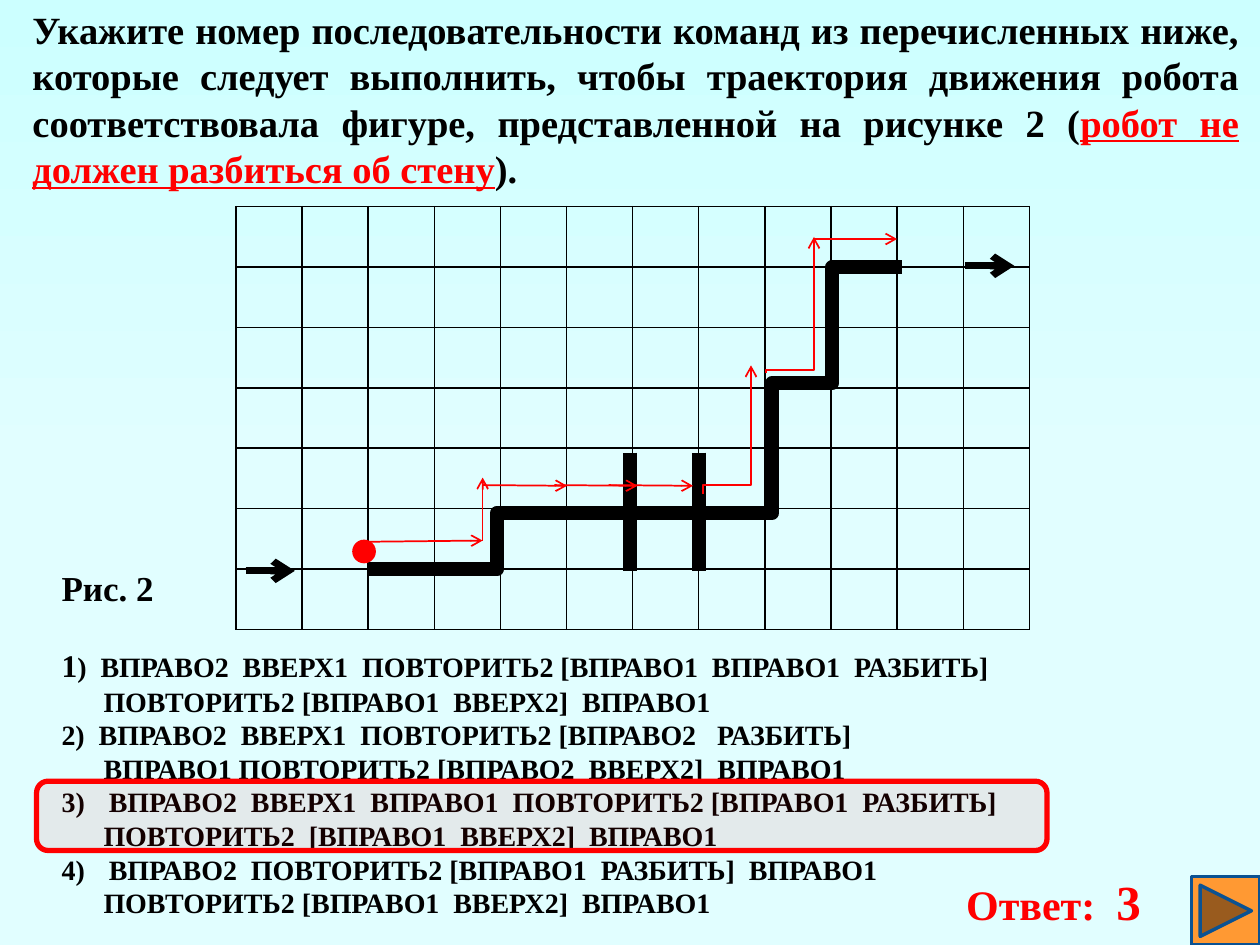
from lxml import etree
from pptx import Presentation
from pptx import util as u
from pptx.dml.color import RGBColor
from pptx.enum import shapes, text
from pptx.oxml.ns import qn

COLORS = {
    "sky": "CCFFFF", "pale_sky": "E1FEFF", "ink": "000000",
    "red": "FF0000", "orange": "FF9933", "navy": "0B5292",
}
FONT = "Times New Roman"
SHAPE = shapes.MSO_SHAPE
LINE = shapes.MSO_CONNECTOR


def rgb(name):
    return RGBColor.from_string(COLORS[name])


def add_xml(parent, tag, **attributes):
    return etree.SubElement(parent, qn(tag), attributes)


class SlideBuilder:
    """Draws on one slide; every length is in points."""

    def __init__(self, slide):
        self.slide = slide
        self.shapes = slide.shapes

    def background(self, top, bottom, end):
        fill = self.slide.background.fill
        fill.gradient()
        fill.gradient_angle = 270
        for stop, color, position in zip(fill.gradient_stops, (top, bottom), (0, end)):
            stop.color.rgb = rgb(color)
            stop.position = position

    def text(self, box, paragraphs, size, color="ink", align=text.PP_ALIGN.LEFT):
        """Each paragraph is a list of (text, font overrides) runs."""
        frame = self.shapes.add_textbox(*map(u.Pt, box)).text_frame
        frame.word_wrap = True
        frame.auto_size = text.MSO_AUTO_SIZE.SHAPE_TO_FIT_TEXT
        for i, runs in enumerate(paragraphs):
            paragraph = frame.add_paragraph() if i else frame.paragraphs[0]
            paragraph.alignment = align
            font = paragraph.font
            font.name, font.size, font.bold = FONT, u.Pt(size), True
            font.color.rgb = rgb(color)
            for words, override in runs:
                run = paragraph.add_run()
                run.text = words
                run.font.name = FONT
                run.font.bold = True
                run.font.size = u.Pt(override.get("size", size))
                run.font.color.rgb = rgb(override.get("color", color))
                if override.get("underline"):
                    run.font.underline = True
        return frame

    def indent(self, paragraph, left, number=None):
        """Indent a paragraph, hanging an automatic number if one is given."""
        properties = paragraph._p.get_or_add_pPr()
        properties.set("marL", str(u.Pt(left)))
        properties.set("indent", str(-u.Pt(left) if number else 0))
        if number:
            bullet = etree.Element(qn("a:buAutoNum"), type="arabicParenR", startAt=str(number))
            properties.insert(0, bullet)

    def grid(self, left, top, columns, rows, cell_width, cell_height):
        table = self.shapes.add_table(
            rows, columns, u.Pt(left), u.Pt(top),
            u.Pt(columns * cell_width), u.Pt(rows * cell_height)).table
        table.first_row = table.horz_banding = False
        for column in table.columns:
            column.width = u.Pt(cell_width)
        for row in table.rows:
            row.height = u.Pt(cell_height)
        for cell in table.iter_cells():
            properties = cell._tc.get_or_add_tcPr()
            for side in "LRTB":
                border = add_xml(properties, f"a:ln{side}", w=str(u.Pt(1)))
                add_xml(add_xml(border, "a:solidFill"), "a:srgbClr", val=COLORS["ink"])
            cell.fill.background()

    def shape(self, kind, box, fill, line, width, opacity=None):
        shape = self.shapes.add_shape(kind, *map(u.Pt, box))
        shape.shadow.inherit = False
        shape.fill.solid()
        shape.fill.fore_color.rgb = rgb(fill)
        if opacity:
            color = shape.element.spPr.find(qn("a:solidFill"))[0]
            add_xml(color, "a:alpha", val=str(opacity * 1000))
        shape.line.color.rgb = rgb(line)
        shape.line.width = u.Pt(width)

    def polyline(self, points, color, width):
        corners = [(u.Pt(x), u.Pt(y)) for x, y in points]
        builder = self.shapes.build_freeform(*corners[0])
        builder.add_line_segments(corners[1:], close=False)
        shape = builder.convert_to_shape()
        shape.shadow.inherit = False
        shape.fill.background()
        shape.line.color.rgb = rgb(color)
        shape.line.width = u.Pt(width)

    def line(self, start, end, color, width, arrow=True, kind=LINE.STRAIGHT):
        connector = self.shapes.add_connector(kind, *map(u.Pt, (*start, *end)))
        connector.line.color.rgb = rgb(color)
        connector.line.width = u.Pt(width)
        properties = connector.element.spPr
        if arrow:
            add_xml(properties.find(qn("a:ln")), "a:tailEnd", type="arrow")
        add_xml(properties, "a:effectLst")
        return connector

    def step(self, start, end, bend, color, width):
        """Arrow going up, right and up; bend is the share of the first rise."""
        (x1, y1), (x2, y2) = start, end
        mid_x, mid_y = (x1 + x2) / 2, (y1 + y2) / 2
        half_rise, half_run = (y1 - y2) / 2, (x2 - x1) / 2
        connector = self.line((mid_x + half_rise, mid_y + half_run),
                              (mid_x - half_rise, mid_y - half_run),
                              color, width, kind=LINE.ELBOW)
        properties = connector.element.spPr
        properties.find(qn("a:xfrm")).set("rot", str(90 * 60000))
        geometry = properties.find(qn("a:prstGeom"))
        guides = geometry.find(qn("a:avLst"))
        if guides is None:
            guides = add_xml(geometry, "a:avLst")
        add_xml(guides, "a:gd", name="adj1", fmla=f"val {round(bend * 100000)}")


def main():
    deck = Presentation()
    deck.slide_width, deck.slide_height = u.Pt(720), u.Pt(540)
    page = SlideBuilder(deck.slides.add_slide(deck.slide_layouts[6]))
    page.background("sky", "pale_sky", 0.5)

    page.text((11.5, 0, 703.5, 113.8), [[
        ("Укажите номер последовательности команд из перечисленных ниже, "
         "которые следует выполнить, чтобы траектория движения робота "
         "соответствовала фигуре, представленной на рисунке 2 (", {}),
        ("робот не должен разбиться об стену", {"color": "red", "underline": True}),
        (").", {})]], 22, align=text.PP_ALIGN.JUSTIFY)

    page.grid(134.8, 118, 12, 7, 37.8, 34.55)
    page.polyline([(210.2, 325.2), (284.2, 325.2), (284.2, 293), (441.4, 293),
                   (441.4, 218.9), (475.7, 218.9), (475.7, 152.6), (515.5, 152.6)], "ink", 8)
    for wall_x in (360, 399.5):
        page.line((wall_x, 258.7), (wall_x, 326.2), "ink", 8, arrow=False)
    page.shape(SHAPE.OVAL, (202.3, 309.4, 11.5, 11.5), "red", "red", 2)
    for x, y in ((140.4, 326.2), (551.5, 151.9)):
        page.line((x, y), (x + 28.1, y), "ink", 4)

    page.text((28.1, 320.4, 90, 31.5), [[("Рис. 2", {})]], 20)
    commands = [
        (0, None, ")  ВПРАВО2  ВВЕРХ1  ПОВТОРИТЬ2 [ВПРАВО1  ВПРАВО1  РАЗБИТЬ]"),
        (24, None, "ПОВТОРИТЬ2 [ВПРАВО1  ВВЕРХ2]  ВПРАВО1"),
        (0, None, "2)  ВПРАВО2  ВВЕРХ1  ПОВТОРИТЬ2 [ВПРАВО2   РАЗБИТЬ]"),
        (24, None, "ВПРАВО1 ПОВТОРИТЬ2 [ВПРАВО2  ВВЕРХ2]  ВПРАВО1"),
        (27, 3, "ВПРАВО2  ВВЕРХ1  ВПРАВО1  ПОВТОРИТЬ2 [ВПРАВО1  РАЗБИТЬ]"),
        (24, None, "ПОВТОРИТЬ2  [ВПРАВО1  ВВЕРХ2]  ВПРАВО1"),
        (27, 4, "ВПРАВО2  ПОВТОРИТЬ2 [ВПРАВО1  РАЗБИТЬ]  ВПРАВО1"),
        (24, None, "ПОВТОРИТЬ2 [ВПРАВО1  ВВЕРХ2]  ВПРАВО1"),
    ]
    lines = [[(words, {})] for _, _, words in commands]
    lines[0].insert(0, ("1", {"size": 18}))
    options = page.text((28.1, 365.8, 624.2, 167), lines, 16)
    for paragraph, (left, number, _) in zip(options.paragraphs, commands):
        page.indent(paragraph, left, number)

    page.text((545, 494.6, 135.4, 41), [[("Ответ:  ", {}), ("3", {"size": 28})]], 24, "red")
    page.shape(SHAPE.ROUNDED_RECTANGLE, (20.9, 446.4, 577.4, 39.6), "red", "red", 3, opacity=8)

    moves = [
        ((208.1, 309.6), (275.8, 308.9)), ((275.8, 308.9), (275.8, 272.9)),
        ((275.8, 277.2), (324, 277.6)), ((316.8, 277.2), (364.3, 277.6)),
        ((347.8, 277.2), (396, 277.6)), ((465.1, 136.6), (512.6, 136.6)),
    ]
    for start, end in moves:
        page.line(start, end, "red", 1)
    page.step((401.8, 282.2), (429.1, 208.8), 0.07, "red", 1)
    page.step((437.8, 213.1), (465.1, 135.4), 0.02, "red", 1)

    page.shape(SHAPE.ACTION_BUTTON_FORWARD_OR_NEXT, (681, 501, 39, 39), "orange", "navy", 2)
    deck.save("out.pptx")


if __name__ == "__main__":
    main()
